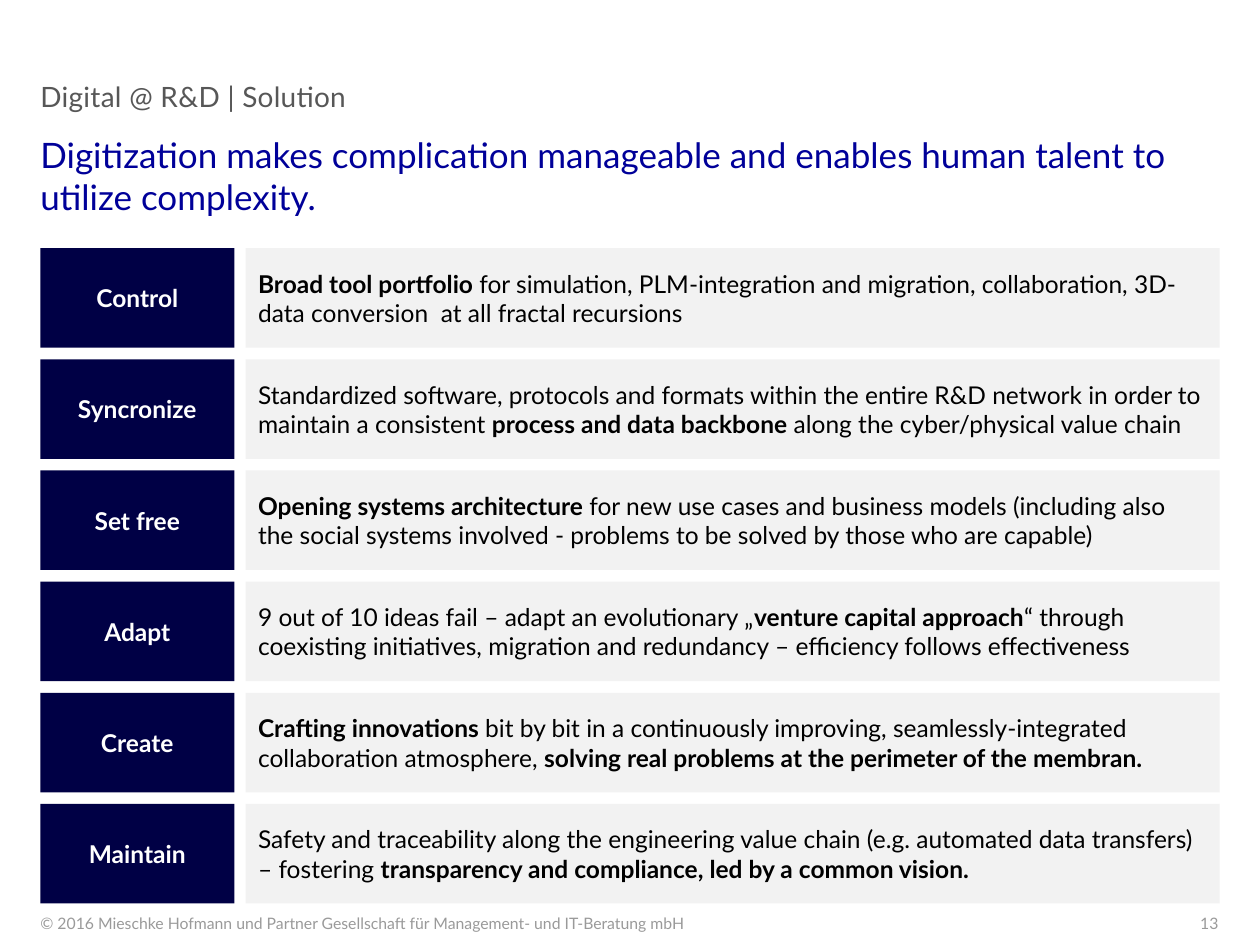
from dataclasses import dataclass

from lxml import etree
from pptx import Presentation
from pptx.dml.color import RGBColor
from pptx.enum.shapes import MSO_SHAPE
from pptx.enum.text import MSO_ANCHOR, MSO_AUTO_SIZE, PP_ALIGN
from pptx.oxml.ns import qn
from pptx.util import Inches, Pt

RECTANGLE = MSO_SHAPE.RECTANGLE
TOP, MIDDLE, BOTTOM = MSO_ANCHOR.TOP, MSO_ANCHOR.MIDDLE, MSO_ANCHOR.BOTTOM
LEFT, CENTER, RIGHT = PP_ALIGN.LEFT, PP_ALIGN.CENTER, PP_ALIGN.RIGHT
NO_AUTOFIT = MSO_AUTO_SIZE.NONE


@dataclass(frozen=True)
class Theme:
    font: str = "Lato"
    title: str = "000099"
    topic: str = "575757"
    footer: str = "9A9A9A"
    label: str = "FFFFFF"
    label_fill: str = "000045"
    text: str = "000000"
    text_fill: str = "F2F2F2"
    title_size: int = 20
    topic_size: int = 16
    row_size: int = 14
    footer_size: int = 9


@dataclass(frozen=True)
class Area:
    left: float
    top: float
    width: float
    height: float


@dataclass(frozen=True)
class Span:
    text: str
    bold: bool = False


@dataclass(frozen=True)
class Row:
    label: str
    spans: tuple[Span, ...]


THEME = Theme()
MARGIN = 0.32
CONTENT_WIDTH = 9.35
ROW_TOP, ROW_HEIGHT, ROW_PITCH = 1.97, 0.79, 0.882
LABEL_WIDTH = 1.54
TEXT_LEFT, TEXT_WIDTH = 1.95, 7.73
FOOTER_TOP, FOOTER_HEIGHT = 7.25, 0.15

ROWS = (
    Row("Control", (
        Span("Broad tool portfolio ", True),
        Span("for simulation, PLM-integration and migration, collaboration, "
             "3D-data conversion  at all fractal recursions"))),
    Row("Syncronize", (
        Span("Standardized software, protocols and formats within the entire "
             "R&D network in order to maintain a consistent "),
        Span("process and data backbone ", True),
        Span("along the cyber/physical value chain"))),
    Row("Set free", (
        Span("Opening systems architecture ", True),
        Span("for new use cases and business models (including also the social "
             "systems involved - problems to be solved by those who are capable)"))),
    Row("Adapt", (
        Span("9 out of 10 ideas fail – adapt an evolutionary „"),
        Span("venture capital approach", True),
        Span("“ through coexisting initiatives, migration and redundancy – "
             "efficiency follows effectiveness"))),
    Row("Create", (
        Span("Crafting innovations ", True),
        Span("bit by bit in a continuously improving, seamlessly-integrated "
             "collaboration atmosphere, "),
        Span("solving real problems at the perimeter of the membran.", True))),
    Row("Maintain", (
        Span("Safety and traceability along the engineering value chain "
             "(e.g. automated data transfers) – fostering "),
        Span("transparency and compliance, led by a common vision.", True))),
)


def place(shape, area: Area) -> None:
    shape.left, shape.top = Inches(area.left), Inches(area.top)
    shape.width, shape.height = Inches(area.width), Inches(area.height)


def style_paragraph(para, size: int, color: str, align) -> None:
    para.alignment = align
    para.font.name = THEME.font
    para.font.size = Pt(size)
    para.font.color.rgb = RGBColor.from_string(color)


def write_plain(shape, text: str, size: int, color: str, align=LEFT, anchor=TOP):
    """Write one line of text without insets and return its paragraph."""
    frame = shape.text_frame
    frame.word_wrap = True
    frame.auto_size = NO_AUTOFIT
    frame.vertical_anchor = anchor
    frame.margin_left = frame.margin_right = 0
    frame.margin_top = frame.margin_bottom = 0
    frame.text = text
    para = frame.paragraphs[0]
    style_paragraph(para, size, color, align)
    return para


def add_footer(page, area: Area, text: str, align) -> None:
    box = page.shapes.add_textbox(0, 0, 0, 0)
    place(box, area)
    write_plain(box, text, THEME.footer_size, THEME.footer, align)


def add_block(page, area: Area, fill: str, color: str, align,
              spans: tuple[Span, ...]) -> None:
    block = page.shapes.add_shape(RECTANGLE, 0, 0, 0, 0)
    place(block, area)
    block.shadow.inherit = False
    block.fill.solid()
    block.fill.fore_color.rgb = RGBColor.from_string(fill)
    block.line.fill.background()
    block.text_frame.word_wrap = True
    block.text_frame.vertical_anchor = MIDDLE
    para = block.text_frame.paragraphs[0]
    for span in spans:
        run = para.add_run()
        run.text = span.text
        run.font.bold = span.bold
    style_paragraph(para, THEME.row_size, color, align)


def add_headings(page) -> None:
    title = page.shapes.title
    place(title, Area(MARGIN, 1.06, CONTENT_WIDTH, 0.67))
    write_plain(title, "Digitization makes complication manageable and enables "
                "human talent to utilize complexity.", THEME.title_size, THEME.title)

    topic = page.placeholders[1]
    place(topic, Area(MARGIN, 0.32, 7.8, 0.58))
    para = write_plain(topic, "Digital @ R&D | Solution", THEME.topic_size,
                       THEME.topic, anchor=BOTTOM)
    para.line_spacing = 1.25
    para.space_before = Pt(0)
    # Remove the bullet and its indent, and widen the letter spacing
    properties = para._p.get_or_add_pPr()
    properties.set("marL", "0")
    properties.set("indent", "0")
    bullet = etree.Element(qn("a:buNone"))
    properties.find(qn("a:defRPr")).addprevious(bullet)
    para.runs[0]._r.get_or_add_rPr().set("spc", "20")


def main() -> None:
    deck = Presentation()
    deck.slide_width, deck.slide_height = Inches(10), Inches(7.5)
    page = deck.slides.add_slide(deck.slide_layouts[1])

    # Topic and title
    add_headings(page)

    # Label and explanation for each principle
    for index, row in enumerate(ROWS):
        top = ROW_TOP + index * ROW_PITCH
        add_block(page, Area(MARGIN, top, LABEL_WIDTH, ROW_HEIGHT),
                  THEME.label_fill, THEME.label, CENTER, (Span(row.label, True),))
        add_block(page, Area(TEXT_LEFT, top, TEXT_WIDTH, ROW_HEIGHT),
                  THEME.text_fill, THEME.text, LEFT, row.spans)

    # Copyright line and page number
    add_footer(page, Area(MARGIN, FOOTER_TOP, 6.31, FOOTER_HEIGHT),
               "© 2016 Mieschke Hofmann und Partner Gesellschaft für "
               "Management- und IT-Beratung mbH", LEFT)
    add_footer(page, Area(8.57, FOOTER_TOP, 1.1, FOOTER_HEIGHT), "13", RIGHT)

    deck.save("out.pptx")


if __name__ == "__main__":
    main()
